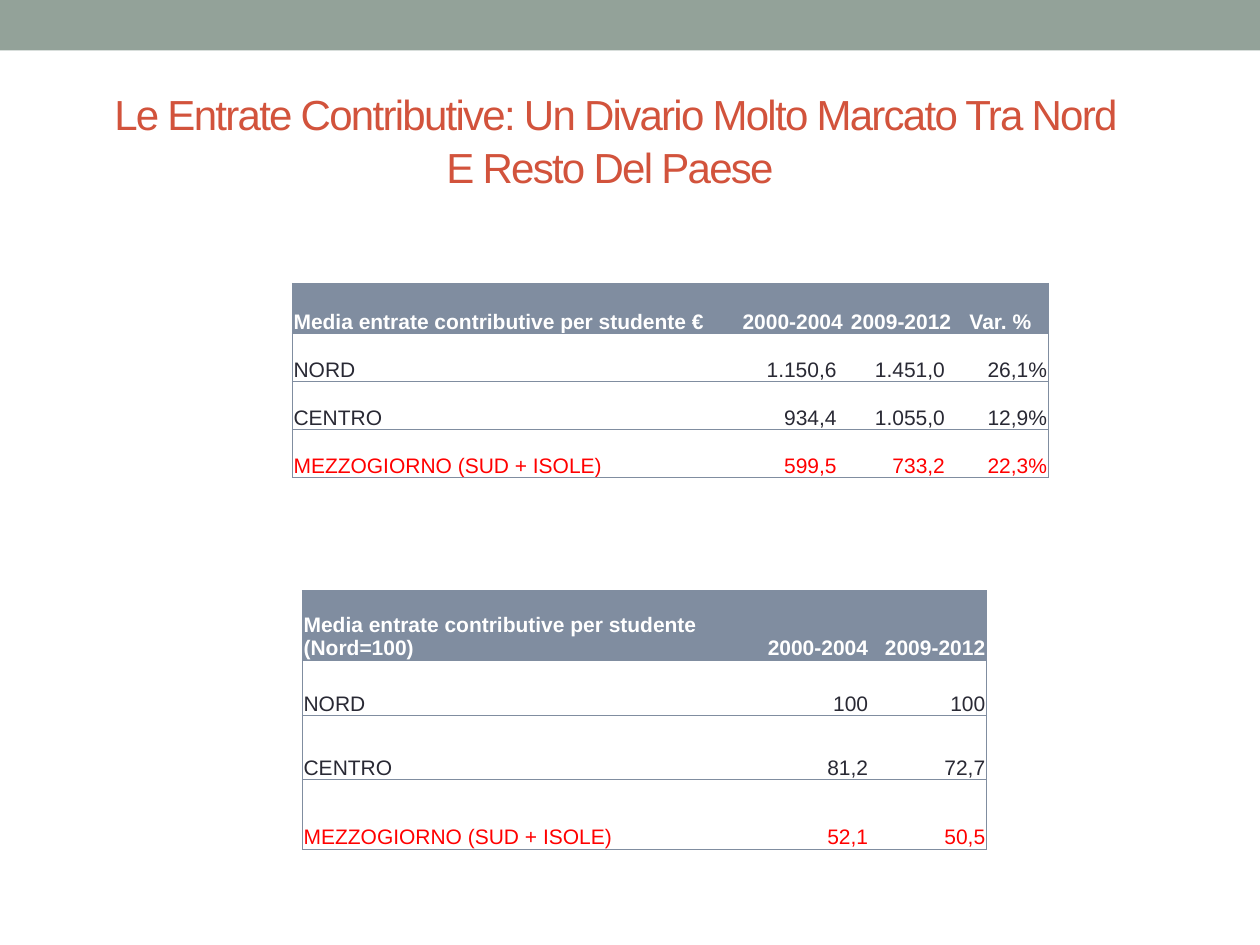
from lxml import etree
from pptx import Presentation
from pptx.dml.color import RGBColor
from pptx.enum.shapes import MSO_SHAPE
from pptx.enum.text import MSO_ANCHOR, MSO_AUTO_SIZE, PP_ALIGN
from pptx.oxml.ns import qn
from pptx.util import Inches, Pt

LEFT, CENTER, RIGHT = PP_ALIGN.LEFT, PP_ALIGN.CENTER, PP_ALIGN.RIGHT
MIDDLE, BOTTOM = MSO_ANCHOR.MIDDLE, MSO_ANCHOR.BOTTOM
FONT = "Arial"
COLORS = {"band": "93A299", "title": "D2533C", "header": "808DA0",
          "white": "FFFFFF", "text": "292934", "south": "FF0000"}

# Content
TITLE = "Le Entrate Contributive: Un Divario Molto Marcato Tra Nord E Resto Del Paese "
AREAS = ["NORD", "CENTRO", "MEZZOGIORNO (SUD + ISOLE)"]
TABLES = [
    {"at": (2.32, 2.25), "cols": [3.52, 0.86, 0.86, 0.76],
     "rows": [0.4, 0.38, 0.38, 0.38],
     "header": ["Media entrate contributive per studente €",
                "2000-2004", "2009-2012", "Var. %"],
     "values": [["1.150,6", "1.451,0", "26,1%"],
                ["934,4", "1.055,0", "12,9%"],
                ["599,5", "733,2", "22,3%"]],
     "header_align": [LEFT, RIGHT, RIGHT, CENTER],
     "value_inset": [0.01, 0.06, 0.06, 0.01]},
    {"at": (2.4, 4.69), "cols": [3.57, 0.93, 0.93],
     "rows": [0.55, 0.44, 0.51, 0.55],
     "header": ["Media entrate contributive per studente (Nord=100)",
                "2000-2004", "2009-2012"],
     "values": [["100", "100"], ["81,2", "72,7"], ["52,1", "50,5"]],
     "header_align": [LEFT, RIGHT, RIGHT],
     "value_inset": [0.01, 0.01, 0.01]},
]


def rgb(name):
    return RGBColor.from_string(COLORS[name])


def add_text(tf, text, size, color, align, bold=False):
    p = tf.paragraphs[0]
    p.alignment = align
    r = p.add_run()
    r.text = text
    r.font.name, r.font.size, r.font.bold = FONT, Pt(size), bold
    r.font.color.rgb = rgb(color)
    return p, r


def set_borders(cell, sides):
    """Draw the named sides and clear the others."""
    tcPr = cell._tc.get_or_add_tcPr()
    for i, side in enumerate("LRTB"):
        ln = etree.Element(qn("a:ln" + side), w=str(Pt(0.75)))
        if side in sides:
            fill = etree.SubElement(ln, qn("a:solidFill"))
            etree.SubElement(fill, qn("a:srgbClr"), val=COLORS["header"])
        else:
            etree.SubElement(ln, qn("a:noFill"))
        tcPr.insert(i, ln)


def add_table(s, data):
    widths, heights = data["cols"], data["rows"]
    x, y = data["at"]
    table = s.shapes.add_table(len(heights), len(widths), Inches(x), Inches(y),
                               Inches(sum(widths)), Inches(sum(heights))).table
    table.first_row = table.horz_banding = False
    for column, width in zip(table.columns, widths):
        column.width = Inches(width)
    for row, height in zip(table.rows, heights):
        row.height = Inches(height)

    lines = [data["header"]] + [[a] + v for a, v in zip(AREAS, data["values"])]
    for i, line in enumerate(lines):
        for j, text in enumerate(line):
            cell = table.cell(i, j)
            cell.vertical_anchor = BOTTOM
            cell.margin_left = cell.margin_top = Inches(0.01)
            cell.margin_right = Inches(data["value_inset"][j] if i else 0.01)
            cell.margin_bottom = 0
            if i == 0:
                cell.fill.solid()
                cell.fill.fore_color.rgb = rgb("header")
                color, align = "white", data["header_align"][j]
            else:
                cell.fill.background()
                color = "south" if i == len(AREAS) else "text"
                align = RIGHT if j else LEFT
            add_text(cell.text_frame, text, 12, color, align, bold=i == 0)
            sides = "TB" + ("L" if j == 0 else "")
            set_borders(cell, sides + ("R" if j == len(line) - 1 else ""))


prs = Presentation()
prs.slide_width, prs.slide_height = Inches(10), Inches(7.5)
s = prs.slides.add_slide(prs.slide_layouts[5])

# Top band
band = s.shapes.add_shape(MSO_SHAPE.RECTANGLE, 0, 0, prs.slide_width, Inches(0.4))
band.shadow.inherit = False
band.fill.solid()
band.fill.fore_color.rgb = rgb("band")
band.line.fill.background()

# Title
title = s.shapes.title
title.left, title.top, title.width, title.height = map(Inches, (0.74, 0.58, 8.28, 1.04))
tf = title.text_frame
tf.word_wrap, tf.auto_size, tf.vertical_anchor = True, MSO_AUTO_SIZE.NONE, MIDDLE
p, r = add_text(tf, TITLE, 24, "title", CENTER)
p.line_spacing = 1.06
r.font._element.set("spc", "-100")

# Tables
for data in TABLES:
    add_table(s, data)

prs.save("out.pptx")
